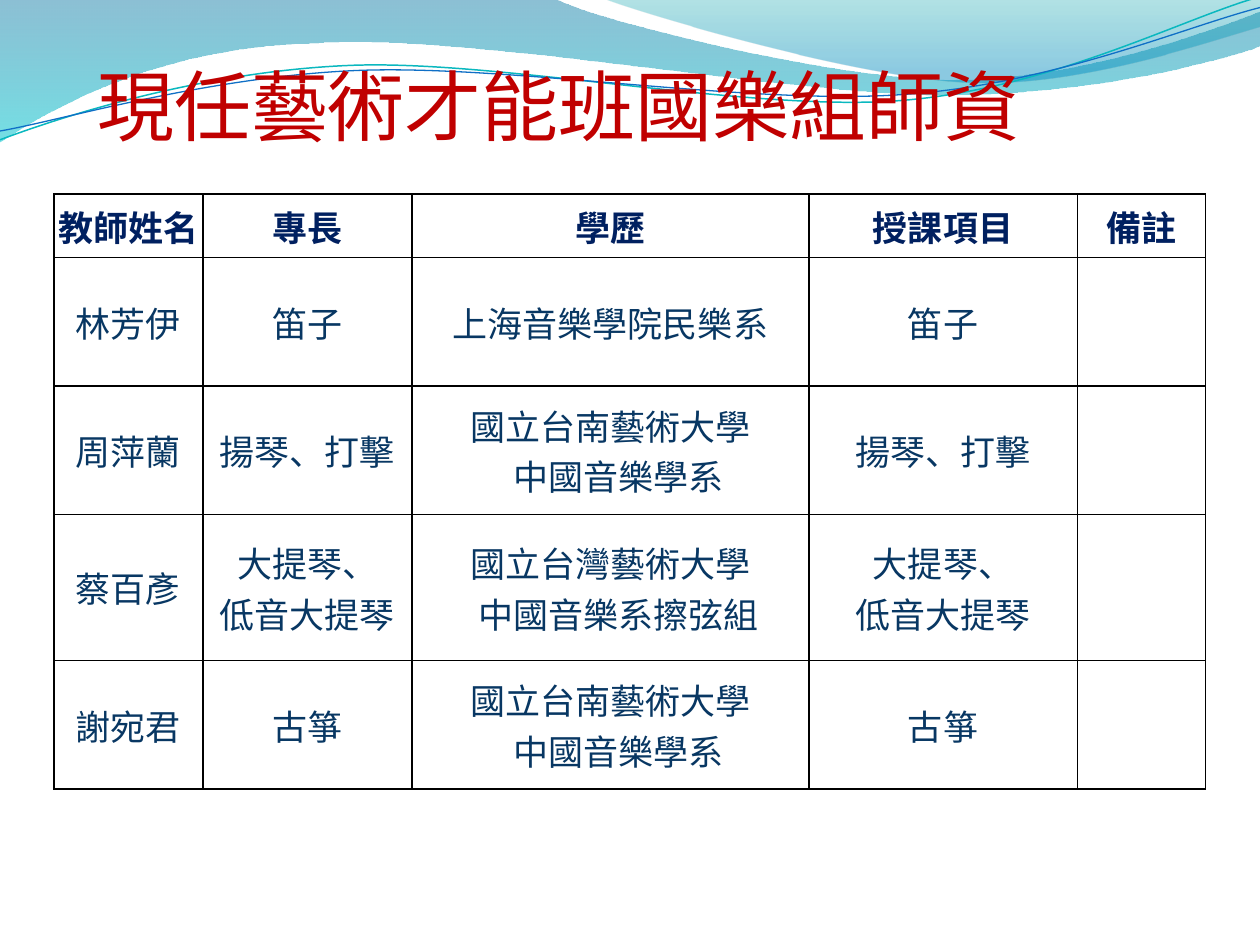
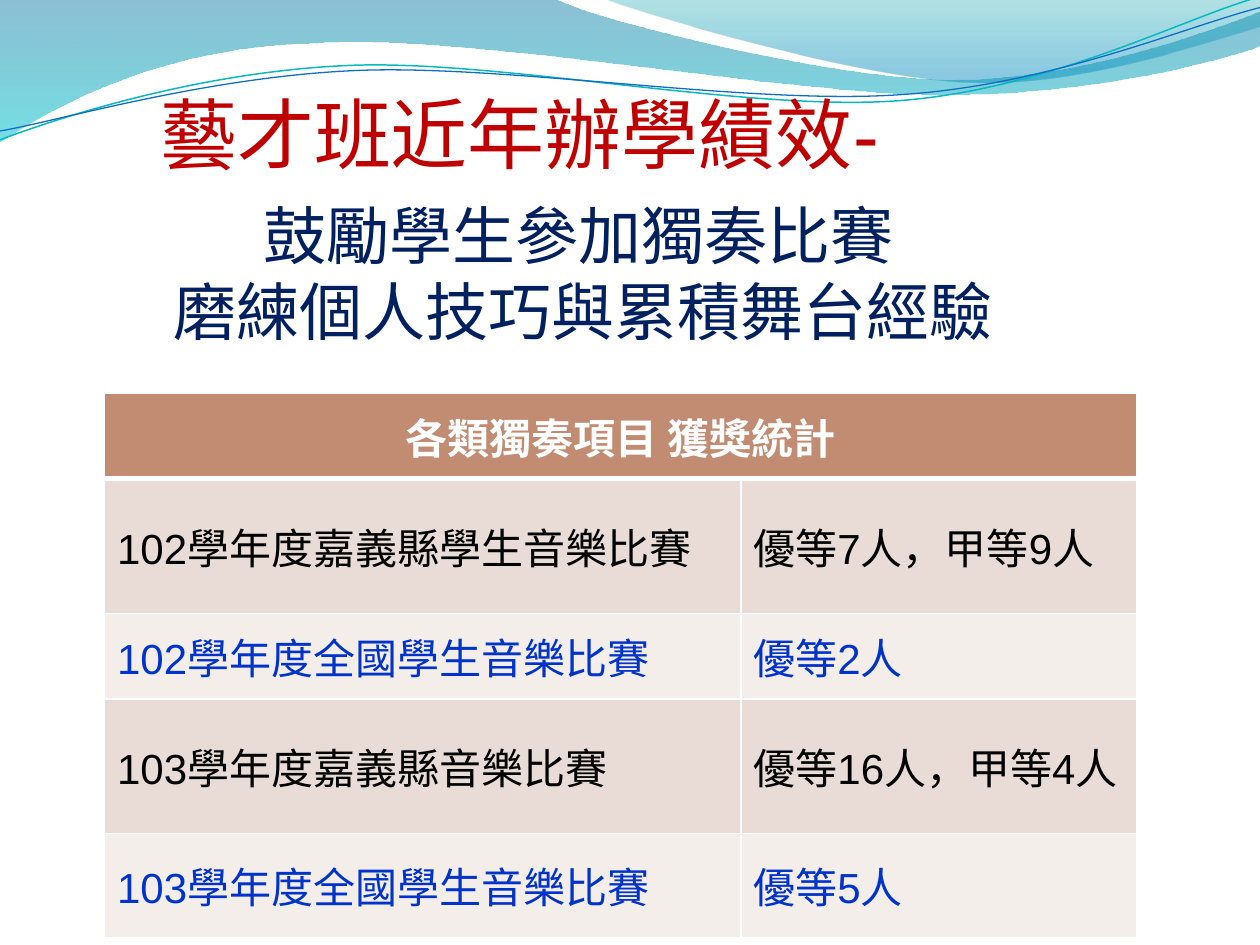
from dataclasses import dataclass

from lxml.etree import SubElement
from pptx import Presentation
from pptx.dml.color import RGBColor
from pptx.enum.text import MSO_ANCHOR, MSO_AUTO_SIZE, PP_ALIGN
from pptx.oxml import parse_xml
from pptx.oxml.ns import nsdecls, qn
from pptx.util import Inches, Pt


@dataclass(frozen=True)
class Theme:
    font: str = "Arial"
    roster_font: str = "Noto Sans CJK SC"
    title_size: int = 44
    subtitle_size: int = 36
    roster_size: int = 20
    award_size: int = 24
    red: str = "C00000"
    navy: str = "002060"
    ink: str = "083763"
    blue: str = "0033CC"
    black: str = "000000"
    white: str = "FFFFFF"
    award_header: str = "C28C73"
    award_bands: tuple = ("E9DBD5", "F4EEEB")


THEME = Theme()

# Each outline: a start point, then straight points (x, y)
# or cubic curves (x1, y1, x2, y2, x, y), in inches.
# Gradient stops: position, colour, opacity in percent.
WAVE_BANDS = [
    ([(0, 0), (4.4, -0.01), (4.76, 0.17, 6.64, 0.63, 7.58, 0.63),
      (8.53, 0.63, 9.58, 0.26, 10, 0.09), (10.01, 0.36),
      (9.83, 0.44, 8.7, 0.76, 7.46, 0.75),
      (6.22, 0.75, 3.82, 0.28, 2.57, 0.34),
      (1.29, 0.36, 0.46, 0.83, -0.01, 1.13)],
     [(0, "0074A1", 45), (1, "00C6CF", 55)]),
    ([(4.79, -0.01), (5.09, 0.11, 6.82, 0.62, 7.69, 0.65),
      (8.56, 0.69, 9.61, 0.32, 10, 0.21), (10, 0)],
     [(0, "00A1A9", 30), (0.8, "008BBF", 45)]),
]
WAVE_LINES = [
    ([(0, 1.11), (0.48, 0.93, 1.58, 0.57, 2.77, 0.52),
      (3.95, 0.47, 5.93, 0.89, 7.13, 0.8),
      (8.33, 0.71, 9.38, 0.15, 9.98, -0.02)], "0AB8BF", 0.85),
    ([(0, 1.04), (0.47, 0.96, 1.64, 0.61, 2.83, 0.56),
      (4.03, 0.51, 5.97, 0.84, 7.17, 0.75),
      (8.36, 0.67, 9.41, 0.21, 10, 0.06)], "0F6FC6", 0.75),
]

ROSTER_HEADER = ["教師姓名", "專長", "學歷", "授課項目", "備註"]
TEACHERS = [
    ("林芳伊", ["笛子"], ["上海音樂學院民樂系"]),
    ("周萍蘭", ["揚琴、打擊"], ["國立台南藝術大學", "中國音樂學系"]),
    ("蔡百彥", ["大提琴、", "低音大提琴"], ["國立台灣藝術大學", "中國音樂系擦弦組"]),
    ("謝宛君", ["古箏"], ["國立台南藝術大學", "中國音樂學系"]),
]
AWARDS = [
    ("102學年度嘉義縣學生音樂比賽", "優等7人，甲等9人"),
    ("102學年度全國學生音樂比賽", "優等2人"),
    ("103學年度嘉義縣音樂比賽", "優等16人，甲等4人"),
    ("103學年度全國學生音樂比賽", "優等5人"),
]


def rgb(color):
    return RGBColor.from_string(color)


# Text
def format_paragraph(paragraph, size, color, font=THEME.font, bold=False,
                     align=PP_ALIGN.LEFT, indent=0):
    paragraph.alignment = align
    paragraph.font.name = font
    paragraph.font.size = Pt(size)
    paragraph.font.bold = bold
    paragraph.font.color.rgb = rgb(color)
    if indent:
        properties = paragraph._p.get_or_add_pPr()
        properties.set("marL", str(Inches(indent)))
        properties.set("indent", "0")


def set_title(slide, box, lines):
    """Each line is (text, size, color, indent, space before)."""
    title = slide.shapes.title
    title.left, title.top, title.width, title.height = map(Inches, box)
    frame = title.text_frame
    frame.auto_size = MSO_AUTO_SIZE.NONE
    frame.vertical_anchor = MSO_ANCHOR.BOTTOM
    frame.text = "\n".join(line[0] for line in lines)
    for paragraph, (_, size, color, indent, before) in zip(frame.paragraphs, lines):
        format_paragraph(paragraph, size, color, indent=indent)
        paragraph.space_before = Pt(before)


# Wave decoration
def add_outline(slide, outline, close):
    """Lay out every point as a line, then join triples into cubic curves."""
    points = [(Inches(x), Inches(y)) for segment in outline
              for x, y in zip(segment[::2], segment[1::2])]
    builder = slide.shapes.build_freeform(*points[0])
    builder.add_line_segments(points[1:], close=close)
    shape = builder.convert_to_shape()
    shape.shadow.inherit = False
    lines = iter(list(shape.element.iter(qn("a:lnTo"))))
    for segment in outline[1:]:
        first = next(lines)
        if len(segment) == 6:
            first.tag = qn("a:cubicBezTo")
            for _ in range(2):
                line = next(lines)
                first.append(line[0])
                line.getparent().remove(line)
    return shape


def add_wave_band(slide, outline, stops):
    shape = add_outline(slide, outline, close=True)
    shape.line.fill.background()
    shape.fill.gradient()
    shape.fill.gradient_angle = 270
    for stop, (position, color, _) in zip(shape.fill.gradient_stops, stops):
        stop.position = position
        stop.color.rgb = rgb(color)
    for node, (_, _, opacity) in zip(shape.element.iter(qn("a:srgbClr")), stops):
        SubElement(node, qn("a:alpha")).set("val", str(opacity * 1000))
    return shape


def add_wave_line(slide, outline, color, width):
    shape = add_outline(slide, outline, close=False)
    shape.fill.background()
    shape.line.color.rgb = rgb(color)
    shape.line.width = Pt(width)
    return shape


def decorate_layout(layout, slide):
    """Build the waves on a slide, then move them to its layout."""
    for placeholder in list(layout.placeholders)[1:]:
        placeholder.element.getparent().remove(placeholder.element)
    waves = [add_wave_band(slide, *band) for band in WAVE_BANDS]
    waves += [add_wave_line(slide, *line) for line in WAVE_LINES]
    for wave in waves:
        layout.element.cSld.spTree.append(wave.element)


# Tables
def add_plain_table(slide, left, top, columns, rows):
    frame = slide.shapes.add_table(len(rows), len(columns), Inches(left), Inches(top),
                                   Inches(sum(columns)), Inches(sum(rows)))
    table = frame.table
    table.first_row = table.horz_banding = False
    for column, width in zip(table.columns, columns):
        column.width = Inches(width)
    for row, height in zip(table.rows, rows):
        row.height = Inches(height)
    return table


def set_borders(cell, color, **widths):
    properties = cell._tc.get_or_add_tcPr()
    for index, side in enumerate("LRTB"):
        width = Pt(widths.get(side, 1))
        properties.insert(index, parse_xml(
            f'<a:ln{side} {nsdecls("a")} w="{width}"><a:solidFill>'
            f'<a:srgbClr val="{color}"/></a:solidFill></a:ln{side}>'))


def fill_cell(cell, lines, margins=(0.1, 0.05), fill=None, last_indent=0, **style):
    cell.margin_left = cell.margin_right = Inches(margins[0])
    cell.margin_top = cell.margin_bottom = Inches(margins[1])
    cell.vertical_anchor = MSO_ANCHOR.MIDDLE
    if fill:
        cell.fill.solid()
        cell.fill.fore_color.rgb = rgb(fill)
    else:
        cell.fill.background()
    cell.text = "\n".join(lines)
    for index, paragraph in enumerate(cell.text_frame.paragraphs):
        format_paragraph(paragraph, indent=last_indent if index else 0, **style)


def add_roster(slide):
    table = add_plain_table(slide, 0.43, 1.54, [1.18, 1.66, 3.15, 2.13, 1.02],
                            [0.43, 1.02, 1.02, 1.16, 1.02])
    records = [[[label] for label in ROSTER_HEADER]]
    records += [[[name], skill, school, skill, []] for name, skill, school in TEACHERS]
    for row, record in enumerate(records):
        header = row == 0
        for column, lines in enumerate(record):
            cell = table.cell(row, column)
            fill_cell(cell, lines, margins=(0, 0.05 if header else 0),
                      last_indent=0.13 if column == 2 else 0,
                      size=THEME.roster_size, font=THEME.roster_font,
                      color=THEME.navy if header else THEME.ink,
                      bold=header, align=PP_ALIGN.CENTER)
            set_borders(cell, THEME.black)


def add_awards(slide):
    table = add_plain_table(slide, 0.83, 3.12, [5.05, 3.14], [0.68] * 4 + [0.83])
    heading = table.cell(0, 0)
    heading.merge(table.cell(0, 1))
    fill_cell(heading, ["各類獨奏項目 獲獎統計"], fill=THEME.award_header,
              size=THEME.award_size, color=THEME.white, bold=True,
              align=PP_ALIGN.CENTER)
    for cell in table.rows[0].cells:
        set_borders(cell, THEME.white, B=3)
    for row, award in enumerate(AWARDS, 1):
        national = row % 2 == 0
        for column, text in enumerate(award):
            cell = table.cell(row, column)
            fill_cell(cell, [text], fill=THEME.award_bands[national],
                      size=THEME.award_size,
                      color=THEME.blue if national else THEME.black)
            set_borders(cell, THEME.white, T=3 if row == 1 else 1)


def main():
    presentation = Presentation()
    presentation.slide_width, presentation.slide_height = Inches(10), Inches(7.5)
    layout = presentation.slide_layouts[5]

    # Teachers
    slide = presentation.slides.add_slide(layout)
    decorate_layout(layout, slide)
    set_title(slide, (0.67, 0.36, 8.5, 0.89),
              [("現任藝術才能班國樂組師資", THEME.title_size, THEME.red, 0, 0)])
    add_roster(slide)

    # Awards
    slide = presentation.slides.add_slide(layout)
    set_title(slide, (1.17, 0.42, 8.5, 2.39), [
        ("藝才班近年辦學績效-", THEME.title_size, THEME.red, 0, 0),
        ("鼓勵學生參加獨奏比賽", THEME.subtitle_size, THEME.navy, 0.82, 10),
        ("磨練個人技巧與累積舞台經驗", THEME.subtitle_size, THEME.navy, 0.11, 0),
    ])
    add_awards(slide)

    presentation.save("out.pptx")


if __name__ == "__main__":
    main()
